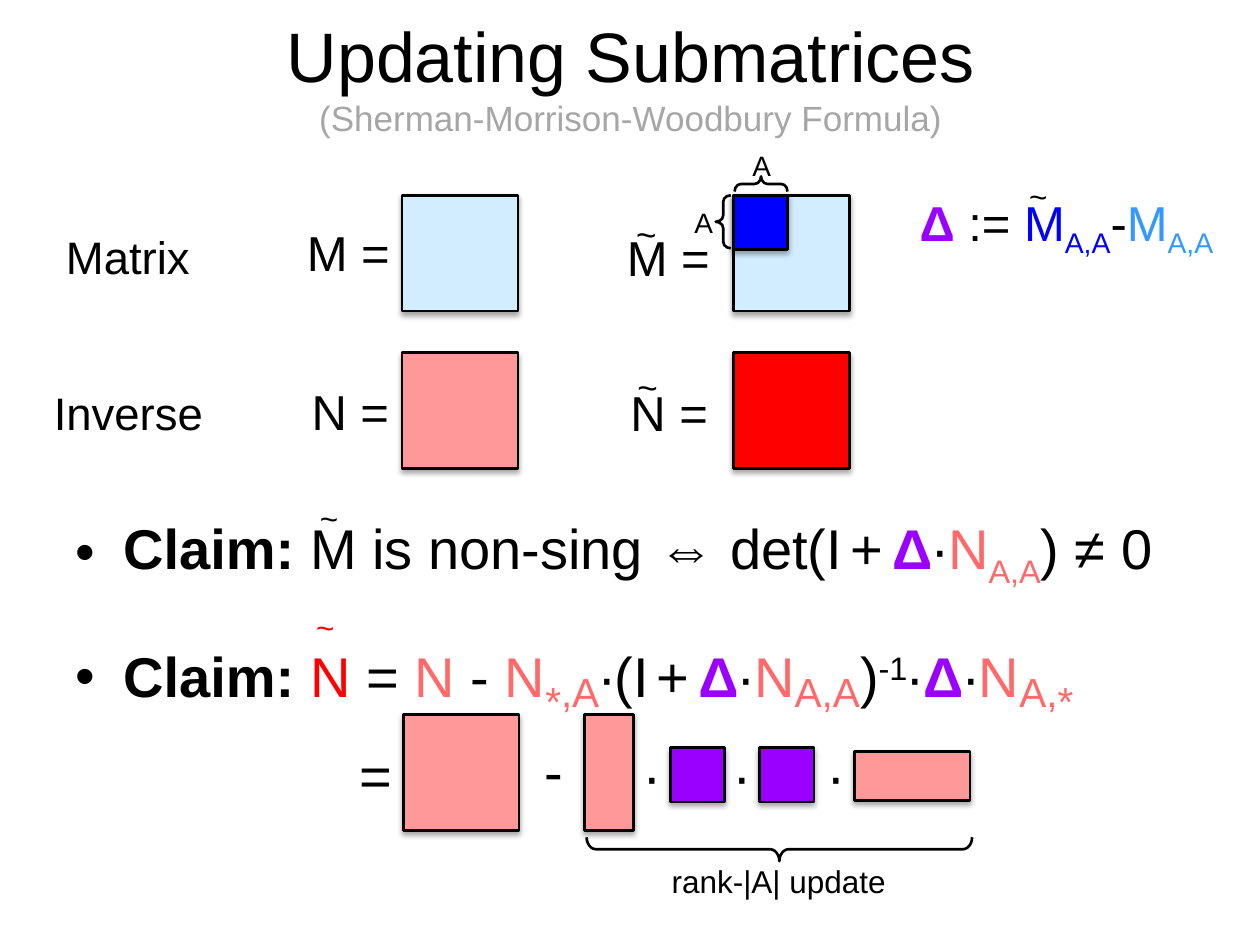
from lxml import etree
from pptx import Presentation
from pptx.dml.color import RGBColor
from pptx.enum import shapes, text
from pptx.oxml import parse_xml
from pptx.oxml.ns import qn
from pptx.util import Inches, Pt

BLACK, GREY, RED, SALMON = "000000", "A6A6A6", "FF0000", "FF6969"
PURPLE, BLUE, SKY = "9900FF", "0000FF", "3399FF"
PALE_BLUE, PINK = "D1EDFF", "FF9999"
A_NS = "http://schemas.openxmlformats.org/drawingml/2006/main"

# Runs: (text, colour, size, bold, baseline shift in percent)
DELTA = ("Δ", PURPLE, 32, True, 0)
DOT = ("∙", BLACK, 32, False, 0)
N = ("N", SALMON, 32, False, 0)
CLAIM = ("Claim: ", BLACK, 32, True, 0)
I_PLUS = [(" ", BLACK, 16, False, 0), ("+", BLACK, 32, False, 0),
          (" ", BLACK, 18, False, 0)]

TITLE = [("Updating Submatrices", BLACK, 40, False, 0),
         ("(Sherman-Morrison-Woodbury Formula)", GREY, 20, False, 0)]
CLAIMS = [
    [CLAIM, ("M is non-sing ⇔ det(I", BLACK, 32, False, 0), *I_PLUS,
     DELTA, DOT, N, ("A,A", SALMON, 32, False, -25),
     (") ≠ 0", BLACK, 32, False, 0)],
    [CLAIM, ("N", RED, 32, False, 0), (" = ", BLACK, 32, False, 0), N,
     (" - ", BLACK, 32, False, 0), N, ("*", SALMON, 40, False, -28),
     (",A", SALMON, 40, False, -14), ("∙(I", BLACK, 32, False, 0), *I_PLUS,
     DELTA, DOT, N, ("A,A", SALMON, 40, False, -14),
     (")", BLACK, 32, False, 0), ("-1", BLACK, 32, False, 30), DOT, DELTA, DOT,
     N, ("A,", SALMON, 40, False, -14), ("*", SALMON, 40, False, -28)],
]
CLAIM_SPACE_BEFORE = [6.4, 21]
DELTA_DEFINITION = [
    ("Δ", PURPLE, 28, True, 0), (" := ", BLACK, 28, False, 0),
    ("M", BLUE, 28, False, 0), ("A,A", BLUE, 28, False, -25),
    ("-", BLACK, 28, False, 0),
    ("M", SKY, 28, False, 0), ("A,A", SKY, 28, False, -25)]

# Labels: (text, size, left, top, width, height)
LABELS = [
    ("Matrix", 26, 0.42, 1.77, 1.19, 0.54),
    ("Inverse", 26, 0.32, 3.01, 1.4, 0.54),
    ("M =", 28, 2.33, 1.72, 0.87, 0.57),
    ("M =", 28, 4.87, 1.76, 0.87, 0.57),
    ("N =", 28, 2.37, 2.98, 0.82, 0.57),
    ("N =", 28, 4.9, 2.99, 0.82, 0.57),
    ("A", 16, 5.41, 1.58, 0.35, 0.37),
    ("A", 16, 5.87, 1.13, 0.35, 0.37),
    ("=", 32, 2.69, 5.83, 0.59, 0.64),
    ("-", 32, 4.22, 5.8, 0.35, 0.64),
    ("rank-|A| update", 18, 5.22, 6.79, 1.92, 0.4),
] + [("∙", 32, left, 5.83, 0.33, 0.64) for left in (5.01, 5.73, 6.47)]

# Tildes: (colour, size, left, top, width, height)
TILDES = [
    (BLACK, 20, 4.95, 1.64, 0.36, 0.44),
    (BLACK, 20, 4.96, 2.85, 0.36, 0.44),
    (BLACK, 18, 8.07, 1.36, 0.35, 0.4),
    (BLACK, 18, 2.44, 3.91, 0.35, 0.4),
    (RED, 18, 2.41, 4.78, 0.35, 0.4),
]

# Matrix blocks: (colour, left, top, width, height)
FULL, PART, STRIP = 0.92, 0.43, 0.39
LEFT_COL, RIGHT_COL, MATRIX_ROW, INVERSE_ROW, UPDATE_ROW = 3.19, 5.82, 1.55, 2.8, 5.67
MIDDLE = UPDATE_ROW + FULL / 2 + 0.02
BLOCKS = [
    (PALE_BLUE, LEFT_COL, MATRIX_ROW, FULL, FULL),
    (PALE_BLUE, RIGHT_COL, MATRIX_ROW, FULL, FULL),
    (BLUE, RIGHT_COL, MATRIX_ROW, PART, PART),
    (PINK, LEFT_COL, INVERSE_ROW, FULL, FULL),
    (RED, RIGHT_COL, INVERSE_ROW, FULL, FULL),
    (PINK, 3.2, UPDATE_ROW, FULL, FULL),
    (PINK, 4.64, UPDATE_ROW, STRIP, FULL),
    (PURPLE, 5.32, MIDDLE - PART / 2, PART, PART),
    (PURPLE, 6.03, MIDDLE - PART / 2, PART, PART),
    (PINK, 6.78, MIDDLE + 0.01 - STRIP / 2, FULL, STRIP),
]

# Braces: (preset, bend, rotation, left, top, width, height) before rotation
LEFT_BRACE, RIGHT_BRACE = shapes.MSO_SHAPE.LEFT_BRACE, shapes.MSO_SHAPE.RIGHT_BRACE
BRACES = [
    (LEFT_BRACE, 0.42, 0, 5.68, 1.55, 0.12, 0.42),
    (LEFT_BRACE, 0.42, 90, 5.98, 1.25, 0.12, 0.42),
    (RIGHT_BRACE, 0.39, 90, 6.09, 5.21, 0.19, 3.06),
]


def rgb(colour):
    return RGBColor.from_string(colour)


def add_run(paragraph, wording, colour, size, bold=False, shift=0):
    run = paragraph.add_run()
    run.text = wording
    run.font.name = "Arial"
    run.font.size = Pt(size)
    run.font.bold = bold
    run.font.color.rgb = rgb(colour)
    if shift:
        run.font._element.set("baseline", str(shift * 1000))


def add_frame(slide, box, wrap=True):
    frame = slide.shapes.add_textbox(*map(Inches, box)).text_frame
    frame.word_wrap = wrap
    return frame


def add_label(slide, runs, box, align=text.PP_ALIGN.LEFT):
    frame = add_frame(slide, box, wrap=False)
    frame.auto_size = text.MSO_AUTO_SIZE.SHAPE_TO_FIT_TEXT
    frame.paragraphs[0].alignment = align
    for run in runs:
        add_run(frame.paragraphs[0], *run)


def add_bullet(paragraph):
    properties = paragraph._p.get_or_add_pPr()
    properties.set("marL", str(Inches(0.38)))
    properties.set("indent", str(-Inches(0.38)))
    etree.SubElement(properties, qn("a:buFont")).set("typeface", "Arial")
    etree.SubElement(properties, qn("a:buChar")).set("char", "•")


def add_outlined(slide, preset, box):
    shape = slide.shapes.add_shape(preset, *map(Inches, box))
    shape.shadow.inherit = False
    shape.line.color.rgb = rgb(BLACK)
    shape.line.width = Pt(1.5)
    return shape


def add_block(slide, colour, *box):
    block = add_outlined(slide, shapes.MSO_SHAPE.RECTANGLE, box)
    block.fill.solid()
    block.fill.fore_color.rgb = rgb(colour)
    block._element.spPr.find(qn("a:effectLst")).append(parse_xml(
        f'<a:outerShdw xmlns:a="{A_NS}" blurRad="40000" dist="23000" '
        'dir="5400000" rotWithShape="0"><a:srgbClr val="000000">'
        '<a:alpha val="35000"/></a:srgbClr></a:outerShdw>'))


def add_brace(slide, preset, bend, rotation, *box):
    brace = add_outlined(slide, preset, box)
    brace.fill.background()
    brace.adjustments[0] = bend
    brace.rotation = rotation


def main():
    deck = Presentation()
    deck.slide_width, deck.slide_height = Inches(10), Inches(7.5)
    slide = deck.slides.add_slide(deck.slide_layouts[6])

    title = add_frame(slide, (0.38, 0.13, 9.25, 0.94))
    title.vertical_anchor = text.MSO_ANCHOR.MIDDLE
    heading = title.paragraphs[0]
    heading.alignment = text.PP_ALIGN.CENTER
    add_run(heading, *TITLE[0])
    heading.add_line_break()
    add_run(heading, *TITLE[1])

    body = add_frame(slide, (0.5, 4.03, 9, 1.78))
    for i, (claim, space) in enumerate(zip(CLAIMS, CLAIM_SPACE_BEFORE)):
        paragraph = body.add_paragraph() if i else body.paragraphs[0]
        paragraph.space_before = Pt(space)
        add_bullet(paragraph)
        for run in claim:
            add_run(paragraph, *run)

    for block in BLOCKS:
        add_block(slide, *block)
    for brace in BRACES:
        add_brace(slide, *brace)
    for wording, size, *box in LABELS:
        add_label(slide, [(wording, BLACK, size)], box, text.PP_ALIGN.CENTER)
    for colour, size, *box in TILDES:
        add_label(slide, [("~", colour, size)], box)
    add_label(slide, DELTA_DEFINITION, (7.2, 1.48, 2.63, 0.57))

    deck.save("out.pptx")


if __name__ == "__main__":
    main()
